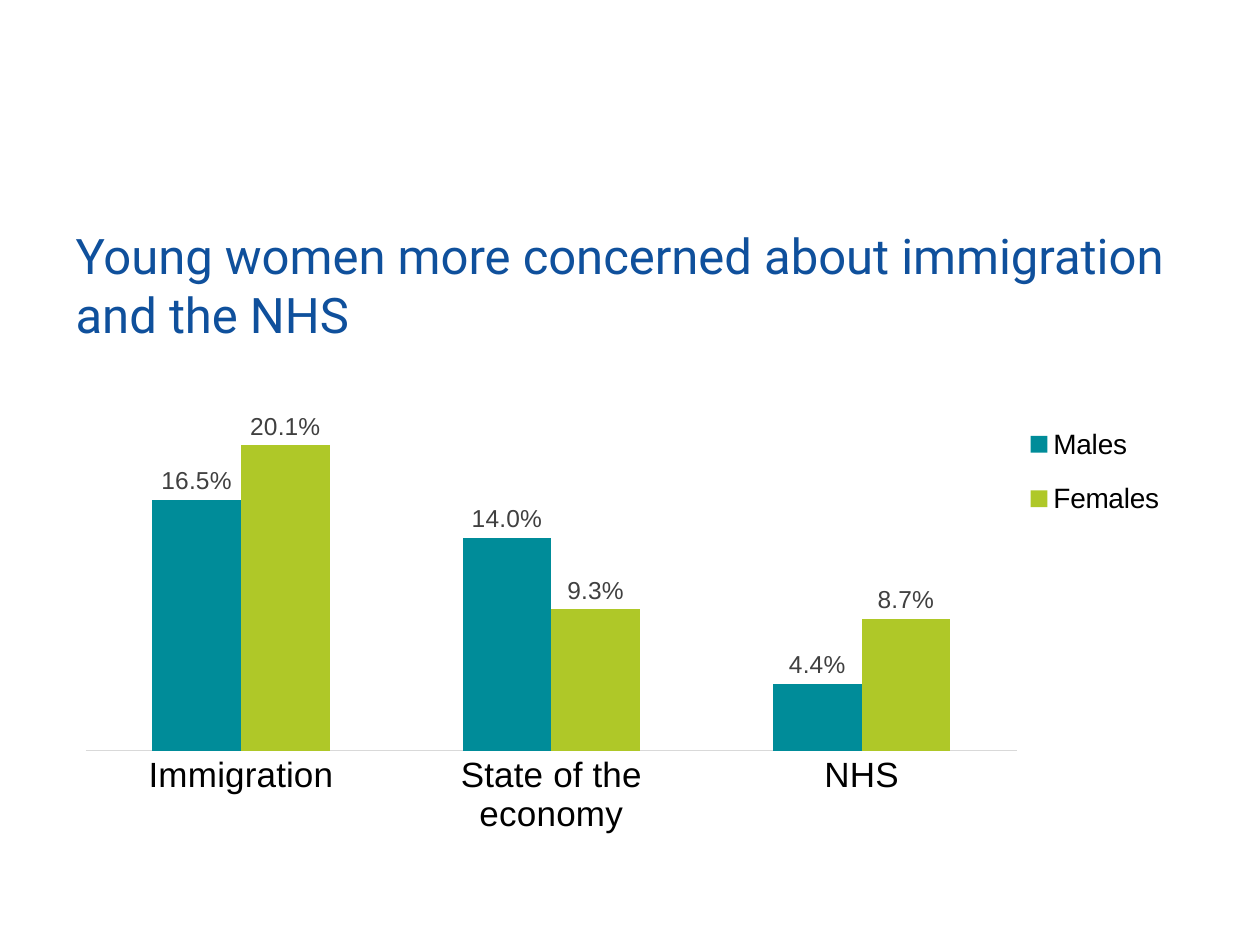
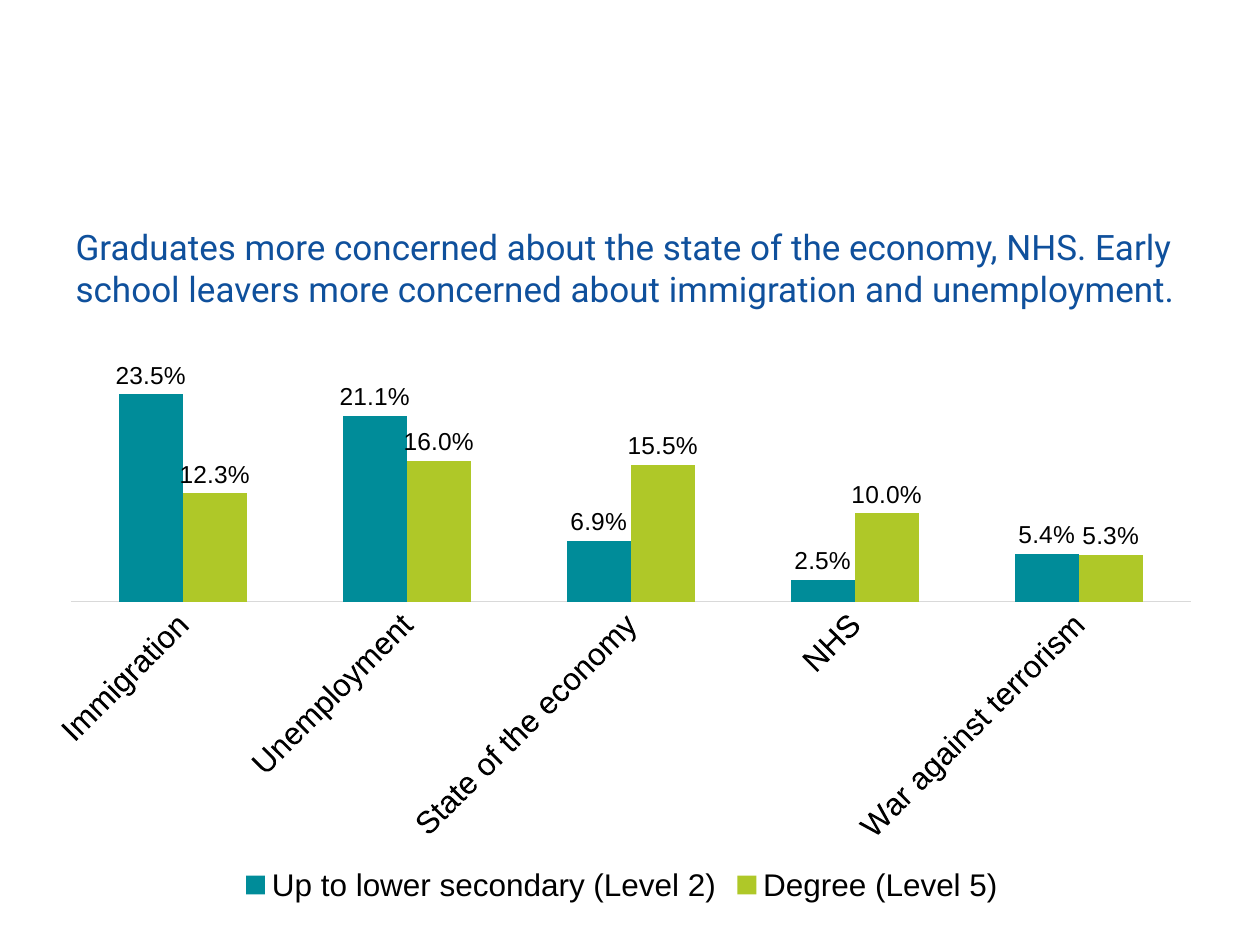
from lxml.etree import SubElement
from pptx import Presentation
from pptx.chart.data import CategoryChartData
from pptx.dml.color import RGBColor
from pptx.enum.chart import XL_CHART_TYPE, XL_LABEL_POSITION, XL_LEGEND_POSITION, XL_TICK_MARK
from pptx.enum.text import MSO_ANCHOR, MSO_AUTO_SIZE, PP_ALIGN
from pptx.oxml import parse_xml
from pptx.oxml.ns import nsdecls, qn
from pptx.util import Inches, Pt

PX_PER_INCH = 126
SLIDE_SIZE = (1260, 945)
TITLE_BOX = (63, 219, 1134, 124)
TITLE_FONT, CHART_FONT = "Roboto", "Arial"
TITLE_BLUE, BLACK, AXIS_GREY = "0F509C", "000000", "D9D9D9"
SERIES_COLORS = ["008C99", "AFC828"]
PERCENT = "###0.0%"
AXIS_TOP = 0.25

SLIDES = [
    {
        "title": "Young women more concerned about immigration and the NHS",
        "title_size": 28,
        "categories": ["Immigration", "State of the economy", "NHS"],
        "series": {
            "Males": [0.165, 0.14, 0.044],
            "Females": [0.201, 0.093, 0.087],
        },
        "chart_box": (63, 362, 1134, 482),
        "plot_box": (86, 371, 931, 380),
        "category_size": 20,
        "category_turn": 0,
        "label_color": "404040",
        "legend_position": XL_LEGEND_POSITION.RIGHT,
        "legend_size": 16,
        "legend_box": (1020, 405, 150, 133),
    },
    {
        "title": "Graduates more concerned about the state of the economy, NHS. "
                 "Early school leavers more concerned about immigration and unemployment.",
        "title_size": 20,
        "categories": ["Immigration", "Unemployment", "State of the economy",
                       "NHS", "War against terrorism"],
        "series": {
            "Up to lower secondary (Level 2)": [0.235, 0.211, 0.069, 0.025, 0.054],
            "Degree (Level 5)": [0.123, 0.16, 0.155, 0.1, 0.053],
        },
        "chart_box": (30, 362, 1184, 547),
        "plot_box": (71, 380, 1120, 221),
        "category_size": 18,
        "category_turn": -45,
        "label_color": BLACK,
        "legend_position": XL_LEGEND_POSITION.BOTTOM,
        "legend_size": 18,
        "legend_box": None,
    },
]


def px(*lengths):
    return [Inches(length / PX_PER_INCH) for length in lengths]


def color(hex_string):
    return RGBColor.from_string(hex_string)


def style_font(font, name, size, hex_string):
    font.name = name
    font.size = Pt(size)
    font.color.rgb = color(hex_string)


def add_title(page, text, size):
    title = page.shapes.title
    title.left, title.top, title.width, title.height = px(*TITLE_BOX)
    frame = title.text_frame
    frame.word_wrap = True
    frame.auto_size = MSO_AUTO_SIZE.NONE
    frame.vertical_anchor = MSO_ANCHOR.TOP
    para = frame.paragraphs[0]
    para.alignment = PP_ALIGN.LEFT
    span = para.add_run()
    span.text = text
    style_font(span.font, TITLE_FONT, size, TITLE_BLUE)


def place_inside(element, index, box, chart_box, inner=False):
    for old_layout in element.findall(qn("c:layout")):
        element.remove(old_layout)
    layout = parse_xml(f"<c:layout {nsdecls('c')}><c:manualLayout/></c:layout>")
    manual = layout[0]
    left, top, width, height = chart_box
    settings = {
        "xMode": "edge",
        "yMode": "edge",
        "x": (box[0] - left) / width,
        "y": (box[1] - top) / height,
        "w": box[2] / width,
        "h": box[3] / height,
    }
    if inner:
        settings = {"layoutTarget": "inner", **settings}
    for name, value in settings.items():
        SubElement(manual, qn(f"c:{name}")).set("val", str(value))
    element.insert(index, layout)


def style_axes(chart, content):
    values = chart.value_axis
    values.minimum_scale, values.maximum_scale = 0, AXIS_TOP
    values.has_major_gridlines = False
    values.tick_labels.number_format = PERCENT
    values.tick_labels.number_format_is_linked = False
    values.visible = False

    categories = chart.category_axis
    categories.major_tick_mark = categories.minor_tick_mark = XL_TICK_MARK.NONE
    categories.format.line.color.rgb = color(AXIS_GREY)
    categories.format.line.width = Pt(0.75)
    style_font(categories.tick_labels.font, CHART_FONT, content["category_size"], BLACK)
    if content["category_turn"]:
        body = categories._element.find(qn("c:txPr")).find(qn("a:bodyPr"))
        body.set("rot", str(content["category_turn"] * 60000))
        body.set("vert", "horz")


def style_bars(plot, label_color):
    plot.gap_width = 150
    plot.overlap = 0
    plot.vary_by_categories = False
    for series, fill_color in zip(plot.series, SERIES_COLORS):
        series.invert_if_negative = False
        series.format.fill.solid()
        series.format.fill.fore_color.rgb = color(fill_color)
        labels = series.data_labels
        labels.show_value = True
        labels.position = XL_LABEL_POSITION.OUTSIDE_END
        labels.number_format = PERCENT
        labels.number_format_is_linked = False
        style_font(labels.font, CHART_FONT, 14, label_color)


def add_column_chart(page, content):
    data = CategoryChartData(number_format=PERCENT)
    data.categories = content["categories"]
    for name, values in content["series"].items():
        data.add_series(name, values)
    chart_box = content["chart_box"]
    chart = page.shapes.add_chart(
        XL_CHART_TYPE.COLUMN_CLUSTERED, *px(*chart_box), data).chart
    chart.has_title = False
    style_font(chart.font, CHART_FONT, 10, BLACK)
    style_axes(chart, content)
    style_bars(chart.plots[0], content["label_color"])

    plot_area = chart._chartSpace.chart.plotArea
    place_inside(plot_area, 0, content["plot_box"], chart_box, inner=True)

    chart.has_legend = True
    legend = chart.legend
    legend.position = content["legend_position"]
    legend.include_in_layout = False
    style_font(legend.font, CHART_FONT, content["legend_size"], BLACK)
    if content["legend_box"]:
        place_inside(legend._element, 1, content["legend_box"], chart_box)


def main():
    deck = Presentation()
    deck.slide_width, deck.slide_height = px(*SLIDE_SIZE)
    title_only = deck.slide_layouts.get_by_name("Title Only")
    for content in SLIDES:
        page = deck.slides.add_slide(title_only)
        add_title(page, content["title"], content["title_size"])
        add_column_chart(page, content)
    deck.save("out.pptx")


if __name__ == "__main__":
    main()
